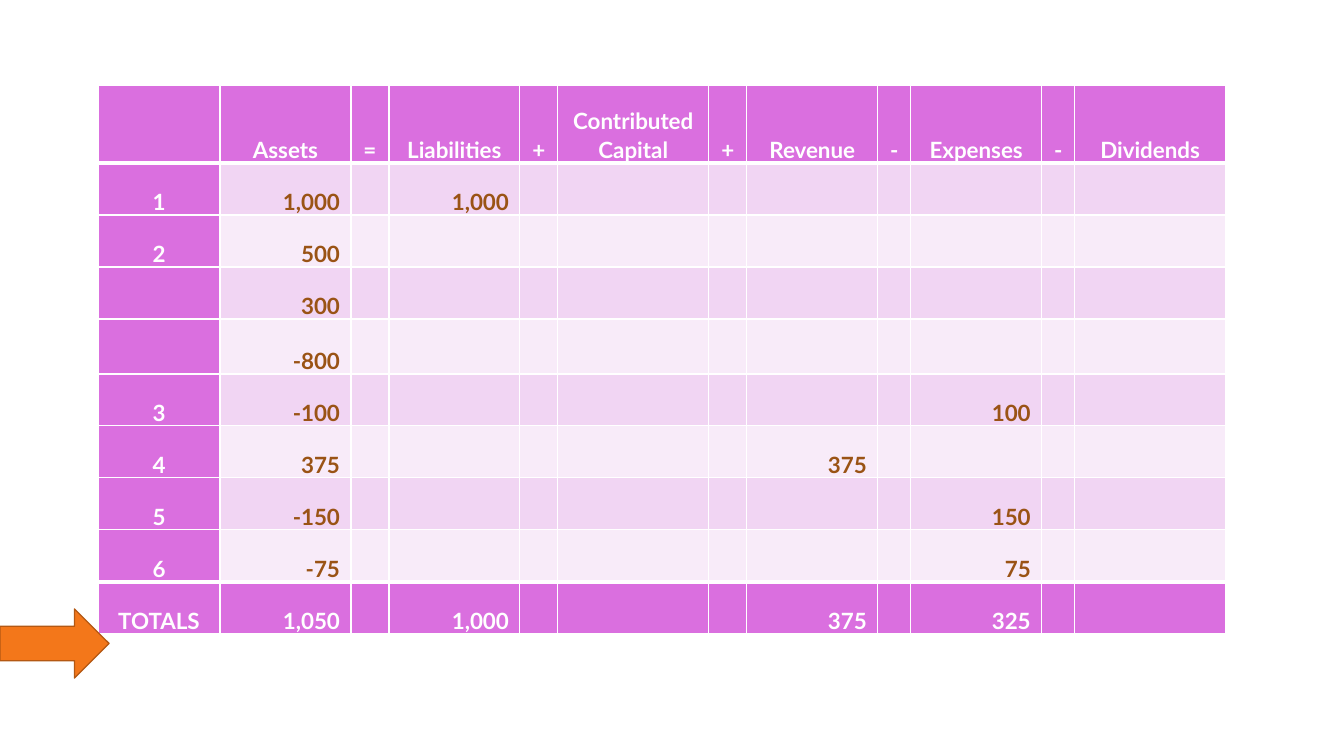
"""Build a slide with an accounting equation table and an arrow at its totals."""
from dataclasses import dataclass

from lxml import etree
from pptx import Presentation
from pptx import util as u
from pptx.dml.color import RGBColor
from pptx.enum import shapes, text
from pptx.oxml import ns


@dataclass(frozen=True)
class Theme:
    font: str = "Lato"
    size: int = 16
    white: str = "FFFFFF"
    heading: str = "DA6FDF"
    bands: tuple = ("F1D5F3", "F8EBF9")
    amount: str = "9A5315"
    arrow: str = "F3771A"
    arrow_line: str = "B45813"


def px(length):
    return u.Emu(round(length * 914400 / 100.8))


def add_border(cell, side, points):
    border = etree.SubElement(cell._tc.get_or_add_tcPr(), ns.qn(f"a:ln{side}"), w=str(u.Pt(points)))
    fill = etree.SubElement(border, ns.qn("a:solidFill"))
    etree.SubElement(fill, ns.qn("a:srgbClr"), val=theme.white)


theme = Theme()
presentation = Presentation()
presentation.slide_width = px(1344)
presentation.slide_height = px(756)
slide = presentation.slides.add_slide(presentation.slide_layouts[6])

headings = ["", "Assets", "=", "Liabilities", "+", "Contributed Capital",
            "+", "Revenue", "-", "Expenses", "-", "Dividends"]
assets, liabilities, revenue, expenses = (
    headings.index(name) for name in ("Assets", "Liabilities", "Revenue", "Expenses"))
entries = [
    ("1", {assets: "1,000", liabilities: "1,000"}),
    ("2", {assets: "500"}),
    ("", {assets: "300"}),
    ("", {assets: "-800"}),
    ("3", {assets: "-100", expenses: "100"}),
    ("4", {assets: "375", revenue: "375"}),
    ("5", {assets: "-150", expenses: "150"}),
    ("6", {assets: "-75", expenses: "75"}),
    ("TOTALS", {assets: "1,050", liabilities: "1,000", revenue: "375", expenses: "325"}),
]
rows = [headings] + [
    [label] + [amounts.get(column, "") for column in range(1, len(headings))]
    for label, amounts in entries
]
column_widths = [122, 131, 38, 131, 38, 151, 38, 131, 33, 131, 33, 151]
row_heights = [78, 52, 52, 52, 55, 52, 52, 52, 52, 52]
last_row = len(rows) - 1

frame = slide.shapes.add_table(len(rows), len(headings), px(98), px(85),
                               px(sum(column_widths)), px(sum(row_heights)))
table = frame.table
table.horz_banding = False
for column, width in zip(table.columns, column_widths):
    column.width = px(width)
for row, height in zip(table.rows, row_heights):
    row.height = px(height)

for row_index, row in enumerate(rows):
    for column_index, wording in enumerate(row):
        cell = table.cell(row_index, column_index)
        outer_row = row_index in (0, last_row)
        is_heading = outer_row or column_index == 0
        is_amount = row_index > 0 and column_index > 0

        cell.margin_left = px(7)
        cell.margin_right = px(11 if is_amount else 7)
        cell.margin_top = cell.margin_bottom = 0
        cell.vertical_anchor = text.MSO_ANCHOR.BOTTOM
        add_border(cell, "L", 1)
        add_border(cell, "R", 1)
        add_border(cell, "T", 3 if row_index in (1, last_row) else 1)
        add_border(cell, "B", 3 if row_index in (0, last_row - 1) else 1)
        cell.fill.solid()
        cell.fill.fore_color.rgb = RGBColor.from_string(
            theme.heading if is_heading else theme.bands[(row_index - 1) % 2])

        cell.text = wording
        paragraph = cell.text_frame.paragraphs[0]
        paragraph.alignment = text.PP_ALIGN.RIGHT if is_amount else text.PP_ALIGN.CENTER
        paragraph.line_spacing = 1.07
        paragraph.font.name = theme.font
        paragraph.font.size = u.Pt(theme.size)
        paragraph.font.bold = True
        paragraph.font.color.rgb = RGBColor.from_string(
            theme.white if is_heading else theme.amount)

arrow = slide.shapes.add_shape(shapes.MSO_SHAPE.RIGHT_ARROW, 0, px(609), px(109), px(69))
arrow.shadow.inherit = False
arrow.fill.solid()
arrow.fill.fore_color.rgb = RGBColor.from_string(theme.arrow)
arrow.line.color.rgb = RGBColor.from_string(theme.arrow_line)
arrow.line.width = u.Pt(1)

presentation.save("out.pptx")
